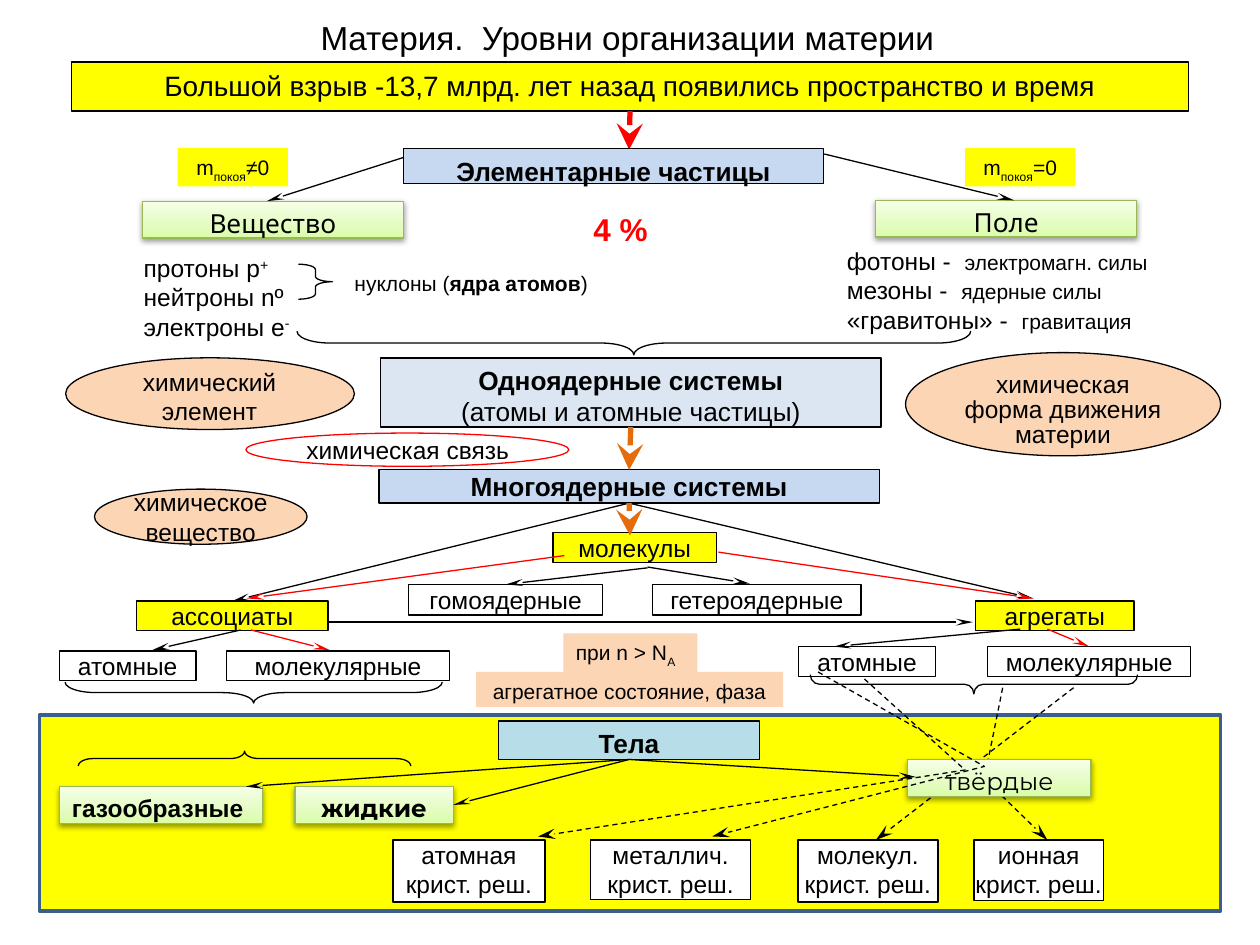
import copy
from dataclasses import dataclass

import pptx
import pptx.dml.color
import pptx.enum.dml
import pptx.enum.shapes
import pptx.enum.text
import pptx.oxml
import pptx.oxml.ns
import pptx.util

Pt = pptx.util.Pt
SHAPE = pptx.enum.shapes.MSO_SHAPE
ALIGN = pptx.enum.text.PP_ALIGN
TOP, LEFT, BOTTOM, RIGHT = range(4)
INSET = (7.2, 3.6)
TIGHT = (0, 0)


@dataclass(frozen=True)
class Theme:
    black: str = "000000"
    white: str = "FFFFFF"
    yellow: str = "FFFF00"
    red: str = "FF0000"
    orange: str = "E46C0A"
    peach: str = "FCD5B5"
    blue: str = "C6D9F1"
    pale_blue: str = "DCE6F2"
    aqua: str = "B7DEE8"
    frame: str = "3A5F8C"
    green_line: str = "98B955"
    green_stops: tuple = ((0, "DAFDA7"), (0.35, "E4FCC2"), (1, "F5FFE7"))
    font: str = "Arial"
    title: int = 19
    accent: int = 18
    banner: int = 16
    heading: int = 15
    body: int = 14
    small: int = 12
    thin: float = 0.75
    thick: float = 3


THEME = Theme()


@dataclass(frozen=True)
class Part:
    text: str
    size: float = None
    bold: bool = None
    baseline: int = 0


def rgb(value):
    return pptx.dml.color.RGBColor.from_string(value)


def write(shape, paragraphs, size=THEME.body, bold=False, color=THEME.black, font=THEME.font,
          align=ALIGN.CENTER, inset=INSET, spacing=None):
    frame = shape.text_frame
    frame.word_wrap = True
    frame.vertical_anchor = pptx.enum.text.MSO_ANCHOR.TOP
    frame.margin_left = frame.margin_right = Pt(inset[0])
    frame.margin_top = frame.margin_bottom = Pt(inset[1])
    for index, parts in enumerate(paragraphs):
        paragraph = frame.paragraphs[0] if index == 0 else frame.add_paragraph()
        paragraph.alignment = align
        paragraph.line_spacing = spacing
        paragraph.font.name = font
        paragraph.font.size = Pt(size)
        paragraph.font.bold = bold
        paragraph.font.color.rgb = rgb(color)
        for part in [Part(parts)] if isinstance(parts, str) else parts:
            run = paragraph.add_run()
            run.text = part.text
            if part.size:
                run.font.size = Pt(part.size)
            if part.bold is not None:
                run.font.bold = part.bold
            if part.baseline:
                run.font._element.set("baseline", str(part.baseline * 1000))


def label(slide, frame, *paragraphs, **style):
    write(slide.shapes.add_textbox(*map(Pt, frame)), paragraphs, **style)


def box(slide, frame, *paragraphs, fill=None, line=THEME.black, width=THEME.thin,
        kind=SHAPE.RECTANGLE, **style):
    shape = slide.shapes.add_shape(kind, *map(Pt, frame))
    paint(shape, fill, line, width)
    if paragraphs:
        write(shape, paragraphs, **style)
    return shape


def paint(shape, fill, line, width=THEME.thin):
    shape.shadow.inherit = False
    if fill:
        shape.fill.solid()
        shape.fill.fore_color.rgb = rgb(fill)
    else:
        shape.fill.background()
    if line:
        shape.line.color.rgb = rgb(line)
        shape.line.width = Pt(width)
    else:
        shape.line.fill.background()


def green_box(slide, frame, text, **style):
    shape = box(slide, frame, text, line=THEME.green_line, **style)
    shape.fill.gradient()
    shape.fill.gradient_angle = 90
    properties = shape._element.spPr
    stops = properties.find(".//" + pptx.oxml.ns.qn("a:gsLst"))
    stops.append(copy.deepcopy(stops[0]))
    for stop, (position, color) in zip(shape.fill.gradient_stops, THEME.green_stops):
        stop.position = position
        stop.color.rgb = rgb(color)
    properties.find(pptx.oxml.ns.qn("a:effectLst")).append(pptx.oxml.parse_xml(
        f'<a:outerShdw {pptx.oxml.ns.nsdecls("a")} blurRad="40000" dist="20000" dir="5400000" rotWithShape="0">'
        '<a:srgbClr val="000000"><a:alpha val="38000"/></a:srgbClr></a:outerShdw>'))
    return shape


def brace(slide, frame, bend, rotation=270, kind=SHAPE.LEFT_BRACE):
    shape = box(slide, frame, kind=kind)
    shape.adjustments[0] = bend
    shape.adjustments[1] = 0.5
    shape.rotation = rotation


def add_head(shape, breadth, length):
    shape.line._get_or_add_ln().append(pptx.oxml.parse_xml(
        f'<a:tailEnd {pptx.oxml.ns.nsdecls("a")} type="stealth" w="{breadth}" len="{length}"/>'))


def arrow(slide, start, end, color=THEME.black, width=THEME.thin, dashed=False):
    points = [(0, 0) if isinstance(point[0], pptx.shapes.base.BaseShape) else point for point in (start, end)]
    connector = slide.shapes.add_connector(
        pptx.enum.shapes.MSO_CONNECTOR.STRAIGHT, *map(Pt, points[0] + points[1]))
    if points[0] != start:
        connector.begin_connect(*start)
    if points[1] != end:
        connector.end_connect(*end)
    connector.line.color.rgb = rgb(color)
    connector.line.width = Pt(width)
    if dashed:
        connector.line.dash_style = pptx.enum.dml.MSO_LINE.DASH
    add_head(connector, "lg" if width == THEME.thick else "med" if dashed else "sm", "lg")
    connector._element.spPr.append(pptx.oxml.parse_xml(f'<a:effectLst {pptx.oxml.ns.nsdecls("a")}/>'))


def bent_arrow(slide, start, *points):
    builder = slide.shapes.build_freeform(*map(Pt, start))
    builder.add_line_segments([tuple(map(Pt, point)) for point in points], close=False)
    path = builder.convert_to_shape()
    paint(path, None, THEME.black)
    path.line.dash_style = pptx.enum.dml.MSO_LINE.DASH
    add_head(path, "med", "lg")


def draw_particles(slide):
    t = THEME
    label(slide, (174, 10, 369, 20), "Материя.  Уровни организации материи", size=t.title, inset=TIGHT)
    big_bang = box(slide, (41, 35.5, 638, 28),
                   "Большой взрыв -13,7 млрд. лет назад появились пространство и время",
                   fill=t.yellow, size=t.banner)
    arrow(slide, (big_bang, BOTTOM), (359.5, 85.5), t.red, t.thick)
    box(slide, (230.5, 85, 240, 20), "Элементарные частицы", fill=t.blue, size=t.heading, bold=True)
    green_box(slide, (81.5, 115, 149, 21), "Вещество", size=t.heading, font="Cabin")
    green_box(slide, (500.5, 114.5, 149, 21), "Поле", size=t.heading, font="Cabin")
    arrow(slide, (230.5, 90), (152.5, 115))
    arrow(slide, (471, 88), (579.5, 114.5))
    for left, relation in ((101.5, "≠0"), (551.5, "=0")):
        box(slide, (left, 84.5, 63, 22), [Part("m"), Part("покоя", baseline=-30), Part(relation)],
            fill=t.yellow, line=None, size=t.small, inset=(0, 3.6))
    box(slide, (75, 141, 147, 60.5), [Part("протоны р"), Part("+", baseline=30)], "нейтроны nº",
        [Part("электроны е"), Part("-", baseline=30)], fill=t.white, line=None, align=ALIGN.LEFT)
    brace(slide, (170.5, 151, 19.5, 20), 0.155, 0, SHAPE.RIGHT_BRACE)
    label(slide, (191.5, 151, 155.5, 22), [Part("нуклоны ("), Part("ядра атомов", bold=True), Part(")")],
          size=t.small)
    forces = (("фотоны -  ", "электромагн. силы"), ("мезоны -  ", "ядерные силы"),
              ("«гравитоны» -  ", "гравитация"))
    label(slide, (481, 137.5, 196, 43), *[[Part(carrier), Part(force, t.small)] for carrier, force in forces],
          align=ALIGN.LEFT, inset=(2.9, 2.9))
    label(slide, (332, 116.5, 57, 29), "4 %", size=t.accent, bold=True, color=t.red, align=ALIGN.LEFT)
    brace(slide, (355.5, 3.5, 13.5, 385), 1.39)


def draw_systems(slide):
    t = THEME
    box(slide, (517.5, 201.5, 180, 59), "химическая форма движения материи",
        fill=t.peach, kind=SHAPE.OVAL, spacing=0.85)
    for ellipse, caption, words in (
            ((37.5, 204.5, 165, 41), (52.5, 206, 134.5, 34.5), "химический элемент"),
            ((54, 279.5, 121.5, 31.5), (54, 275, 121.5, 30), "химическое вещество")):
        box(slide, ellipse, fill=t.peach, kind=SHAPE.OVAL)
        label(slide, caption, words)
    box(slide, (140.5, 247.5, 184.5, 19), line=t.red, kind=SHAPE.OVAL)
    label(slide, (144.5, 248.5, 177, 13.5), "химическая связь", inset=TIGHT)
    single = box(slide, (217.5, 204.5, 286, 39.5), [Part("Одноядерные системы", bold=True)],
                 "(атомы и атомные частицы)", fill=t.pale_blue, size=t.heading)
    multi = box(slide, (216.5, 268.5, 286, 19), "Многоядерные системы",
                fill=t.blue, size=t.heading, bold=True, inset=TIGHT)
    arrow(slide, (single, BOTTOM), (multi, TOP), t.orange, t.thick)

    groups = (("молекулы", (316, 304.5, 93.5, 17), t.yellow), ("ассоциаты", (78, 343.5, 109.5, 17), t.yellow),
              ("агрегаты", (557.5, 343.5, 90.5, 17), t.yellow), ("гомоядерные", (233.5, 334, 111, 17.5), t.white),
              ("гетероядерные", (373, 334, 119, 17.5), t.white), ("атомные", (34, 372, 78, 17), t.white),
              ("молекулярные", (129.5, 372, 127.5, 17), t.white), ("атомные", (456.5, 369.5, 78, 17), t.white),
              ("молекулярные", (564.5, 369.5, 116, 17), t.white))
    _, associates, _, homonuclear, _, _, _, _, molecular_aggregates = [
        box(slide, frame, name, fill=fill, inset=TIGHT) for name, frame, fill in groups]
    arrow(slide, (multi, BOTTOM), (associates, TOP))
    arrow(slide, (multi, BOTTOM), (590.5, 342))
    arrow(slide, (multi, BOTTOM), (360, 306), t.orange, t.thick)
    for start, end, color in (
            ((322.5, 317.5), (141, 342), t.red), ((410.5, 315.5), (590.5, 342), t.red),
            ((370, 324.5), (homonuclear, TOP), t.black), ((370, 324), (428.5, 333.5), t.black),
            ((137.5, 360), (87, 371.5), t.black), ((143.5, 360), (188.5, 371.5), t.red),
            ((583, 359.5), (476.5, 369.5), t.black), ((598.5, 359.5), (molecular_aggregates, TOP), t.red),
            ((187.5, 355.5), (556, 355.5), t.black)):
        arrow(slide, start, end, color)
    brace(slide, (139, 288, 12, 215.5), 1.47)
    brace(slide, (551, 297.5, 11, 187), 0.48)
    box(slide, (272, 384, 175.5, 20), "агрегатное состояние, фаза", fill=t.peach, line=None, size=t.small)
    box(slide, (322, 362, 76.5, 22), [Part("при n > N"), Part("А", baseline=-30)],
        fill=t.peach, line=None, size=t.small, align=ALIGN.LEFT)


def draw_bodies(slide):
    t = THEME
    box(slide, (22.5, 408.5, 675, 112), fill=t.yellow, line=t.frame, width=2)
    arrow(slide, (613.5, 393), (500.5, 480), dashed=True)
    bent_arrow(slide, (573, 393), (562.5, 445), (598.5, 480))
    bodies = box(slide, (285, 412, 149, 22), "Тела", fill=t.aqua, size=t.heading, bold=True)
    green_box(slide, (34, 449.5, 116, 21), "газообразные", bold=True, align=ALIGN.LEFT)
    liquid = green_box(slide, (168.5, 449.5, 90.5, 21), "жидкие", bold=True, font="Montserrat")
    green_box(slide, (518.5, 434, 105, 21), "твёрдые", font="Montserrat")
    brace(slide, (135.5, 338.5, 8.5, 190), 0.97, 90)
    for lattice, left, width, height in (("атомная", 224.5, 87, 35.5), ("металлич.", 337.5, 91.5, 34),
                                         ("молекул.", 456, 80, 35.5), ("ионная", 556.5, 74, 34.5)):
        box(slide, (left, 480, width, height), f"{lattice} крист. реш.", fill=t.white, inset=TIGHT)
    for end in ((liquid, RIGHT), (523.5, 444), (140.5, 449.5)):
        arrow(slide, (bodies, BOTTOM), end)
    bent_arrow(slide, (467.5, 384), (562.5, 438), (407, 478))
    bent_arrow(slide, (494, 388), (551.5, 440), (307.5, 478))


def main():
    presentation = pptx.Presentation()
    presentation.slide_width, presentation.slide_height = Pt(720), Pt(540)
    slide = presentation.slides.add_slide(presentation.slide_layouts[6])
    draw_particles(slide)
    draw_systems(slide)
    draw_bodies(slide)
    presentation.save("out.pptx")


if __name__ == "__main__":
    main()
